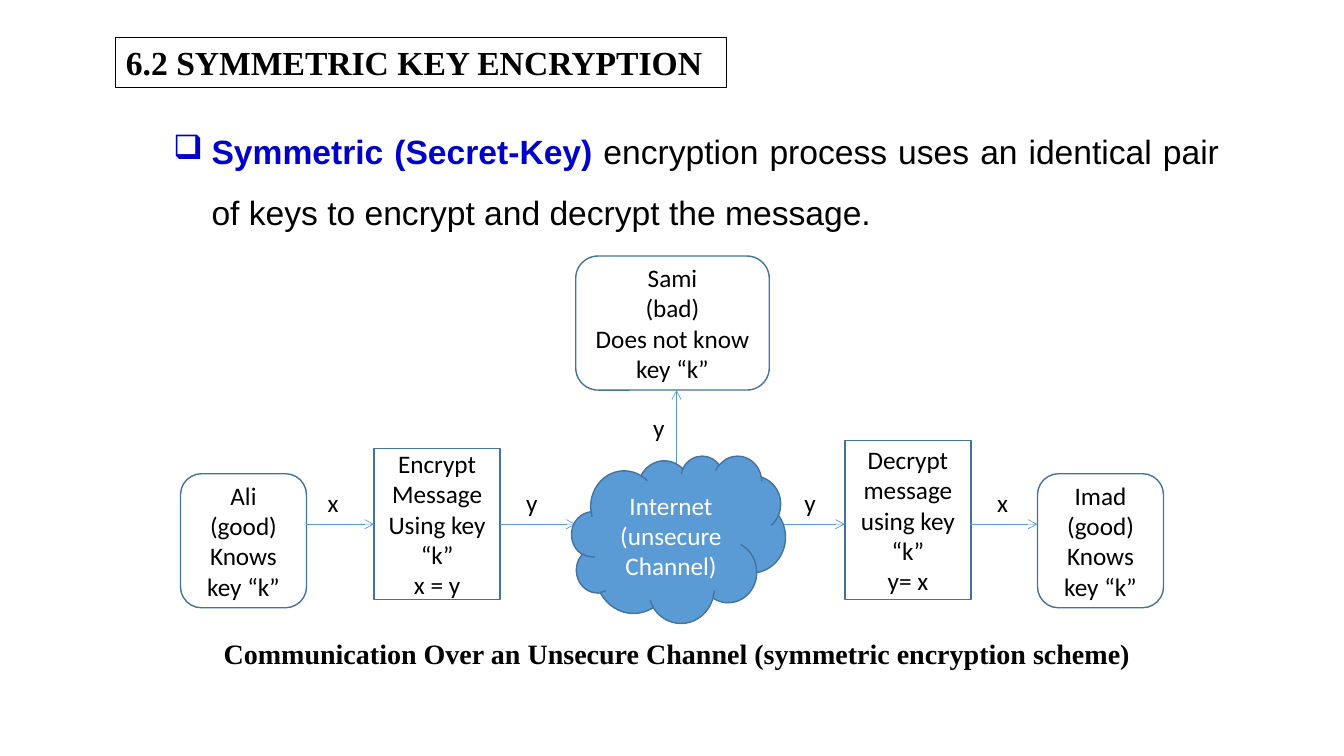
"""Build the slide on symmetric key encryption over an unsecure channel."""
from dataclasses import dataclass

from lxml import etree
from pptx import Presentation
from pptx import util as u
from pptx.dml.color import RGBColor
from pptx.enum import shapes, text
from pptx.oxml.ns import qn


@dataclass(frozen=True)
class Theme:
    ink: str = "000000"
    paper: str = "FFFFFF"
    key_term: str = "0000CC"
    cloud: str = "5B9BD5"
    edge: str = "43739E"
    serif: str = "Times New Roman"
    sans: str = "Arial"
    diagram: str = "Calibri"
    large: int = 24
    medium: int = 20
    small: int = 18


THEME = Theme()
WIDTH, HEIGHT = 13.33, 7.5
FLOW = 5.2
PERSON = (1.25, 1.33)
PERSON_TOP = 4.7
LABEL = (0.32, 0.4)
LABEL_TOP = 4.79

TITLE = "6.2 SYMMETRIC KEY ENCRYPTION"
KEY_TERM = "Symmetric (Secret-Key) "
DEFINITION = "encryption process uses an identical pair of keys to encrypt and decrypt the message."
CAPTION = "Communication Over an Unsecure Channel (symmetric encryption scheme)"

NODES = {
    "Ali": ("ROUNDED_RECTANGLE", (1.79, PERSON_TOP, *PERSON),
            ["Ali", "(good)", "Knows key “k”"]),
    "Sami": ("ROUNDED_RECTANGLE", (5.71, 2.54, 1.92, 1.33),
             ["Sami", "(bad)", "Does not know", "key “k”"]),
    "Imad": ("ROUNDED_RECTANGLE", (10.29, PERSON_TOP, *PERSON),
             ["Imad", "(good)", "Knows key “k”"]),
    "Decrypt": ("RECTANGLE", (8.38, 4.37, 1.25, 1.58),
                ["Decrypt message using key “k”", "y= x"]),
    "Encrypt": ("RECTANGLE", (3.71, 4.45, 1.25, 1.5),
                ["Encrypt", "Message", "Using key “k”", "x = y"]),
}
INTERNET = ("CLOUD", (5.67, 4.52, 2.12, 1.66), ["Internet", "(unsecure Channel)"])

ARROWS = [
    ((3.04, FLOW), (3.71, FLOW), None, "Encrypt"),
    ((4.96, FLOW), (5.71, FLOW), "Encrypt", None),
    ((7.71, FLOW), (8.38, FLOW), None, None),
    ((9.62, FLOW), (10.29, FLOW), None, None),
    ((6.71, 4.62), (6.71, 3.87), None, None),
]
MESSAGES = [("x", 3.15, LABEL_TOP), ("y", 5.12, LABEL_TOP), ("y", 7.88, LABEL_TOP),
            ("x", 9.79, LABEL_TOP), ("y", 6.38, 4.04)]


def inches(lengths):
    return [u.Inches(length) for length in lengths]


def style(font, face, size, color=THEME.ink, bold=False):
    font.name, font.size, font.bold = face, u.Pt(size), bold
    font.color.rgb = RGBColor.from_string(color)


def write(frame, lines, face, size, color=THEME.ink, bold=False,
          align=text.PP_ALIGN.CENTER, anchor=text.MSO_ANCHOR.MIDDLE, wrap=True):
    frame.word_wrap, frame.vertical_anchor = wrap, anchor
    for index, line in enumerate(lines):
        paragraph = frame.add_paragraph() if index else frame.paragraphs[0]
        paragraph.text, paragraph.alignment = line, align
        style(paragraph.font, face, size, color, bold)


def add_box(slide, preset, place, edge=THEME.edge, weight=1, fill=None):
    box = slide.shapes.add_shape(shapes.MSO_SHAPE[preset], *inches(place))
    box.shadow.inherit = False
    box.line.color.rgb, box.line.width = RGBColor.from_string(edge), u.Pt(weight)
    if fill:
        box.fill.solid()
        box.fill.fore_color.rgb = RGBColor.from_string(fill)
    else:
        box.fill.background()
    return box


def add_node(slide, preset, place, lines, fill=None, color=THEME.ink):
    node = add_box(slide, preset, place, fill=fill)
    write(node.text_frame, lines, THEME.diagram, THEME.small, color)
    return node


def add_arrow(slide, start, end, source, target):
    arrow = slide.shapes.add_connector(shapes.MSO_CONNECTOR.STRAIGHT, *inches(start + end))
    if source:
        arrow.begin_connect(source, 3)
    if target:
        arrow.end_connect(target, 1)
    arrow.line.color.rgb, arrow.line.width = RGBColor.from_string(THEME.cloud), u.Pt(0.5)
    etree.SubElement(arrow.line._get_or_add_ln(), qn("a:tailEnd"), type="arrow")
    etree.SubElement(arrow._element.spPr, qn("a:effectLst"))


def add_definition(slide):
    frame = slide.shapes.add_textbox(*inches((1.62, 1.05, 10.57, 1.38))).text_frame
    frame.word_wrap = True
    paragraph = frame.paragraphs[0]
    paragraph.alignment, paragraph.line_spacing = text.PP_ALIGN.JUSTIFY, 1.5
    paragraph.space_before, paragraph.space_after = u.Pt(10), u.Pt(20)
    for words, color, bold in ((KEY_TERM, THEME.key_term, True), (DEFINITION, THEME.ink, False)):
        run = paragraph.add_run()
        run.text = words
        style(run.font, THEME.sans, THEME.large, color, bold)
    properties = paragraph._p.get_or_add_pPr()
    indent = u.Inches(0.38)
    properties.set("marL", str(indent))
    properties.set("indent", str(-indent))
    etree.SubElement(properties, qn("a:buChar"), char="❑")


def main():
    deck = Presentation()
    deck.slide_width, deck.slide_height = inches((WIDTH, HEIGHT))
    slide = deck.slides.add_slide(deck.slide_layouts[6])

    add_definition(slide)
    title = add_box(slide, "RECTANGLE", (1.15, 0.37, 6.06, 0.5), THEME.ink, 0.75)
    write(title.text_frame, [TITLE], THEME.serif, THEME.large, bold=True,
          align=text.PP_ALIGN.LEFT, anchor=text.MSO_ANCHOR.TOP)

    nodes = {name: add_node(slide, *node) for name, node in NODES.items()}
    for start, end, source, target in ARROWS:
        add_arrow(slide, start, end, nodes.get(source), nodes.get(target))
    for message, left, top in MESSAGES:
        label = slide.shapes.add_textbox(*inches((left, top, *LABEL)))
        write(label.text_frame, [message], THEME.diagram, THEME.small,
              align=text.PP_ALIGN.LEFT, anchor=text.MSO_ANCHOR.TOP, wrap=False)
    add_node(slide, *INTERNET, fill=THEME.cloud, color=THEME.paper)

    caption = slide.shapes.add_textbox(*inches((1.43, 6.26, 10.57, 0.44)))
    write(caption.text_frame, [CAPTION], THEME.serif, THEME.medium, bold=True)
    deck.save("out.pptx")


if __name__ == "__main__":
    main()
